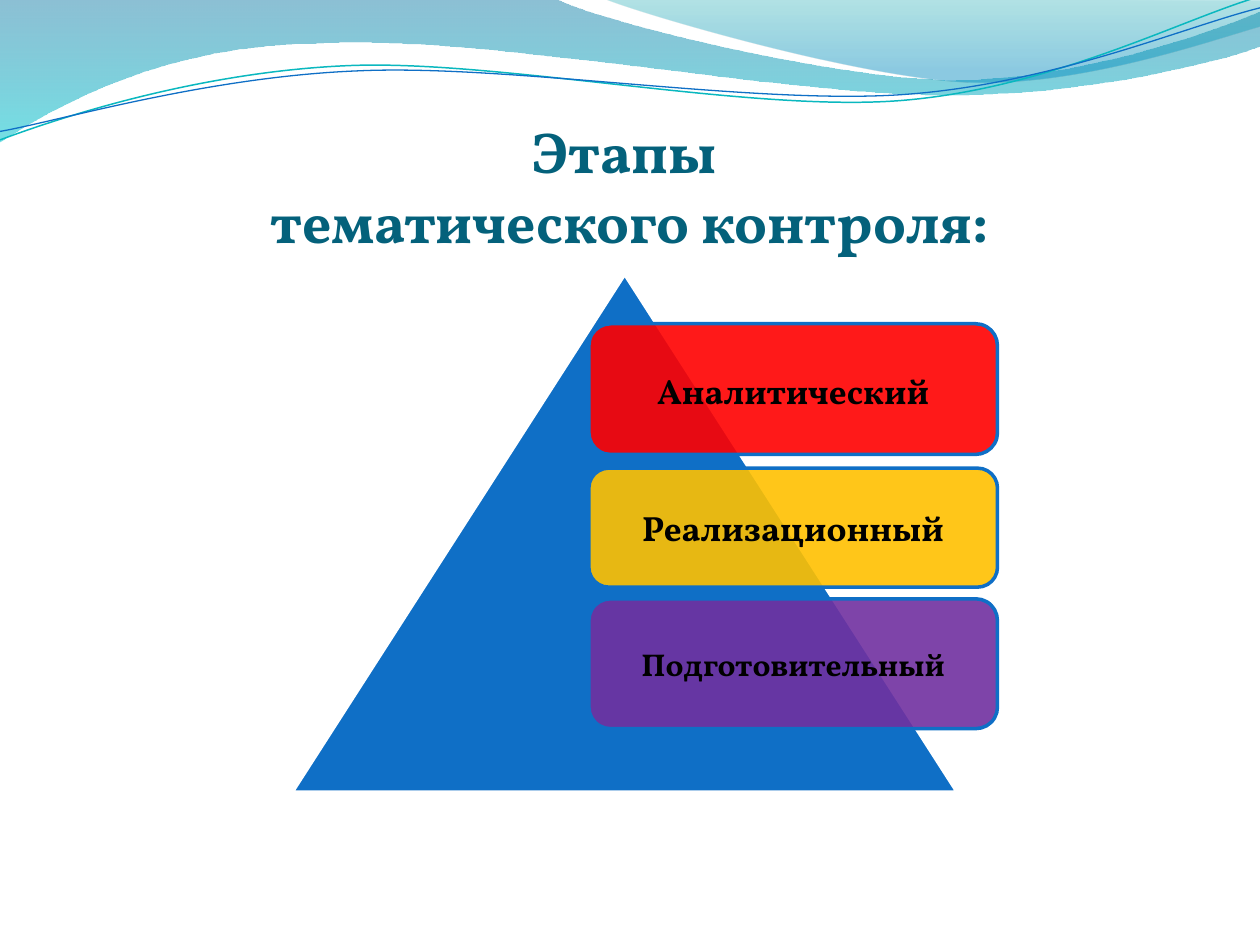
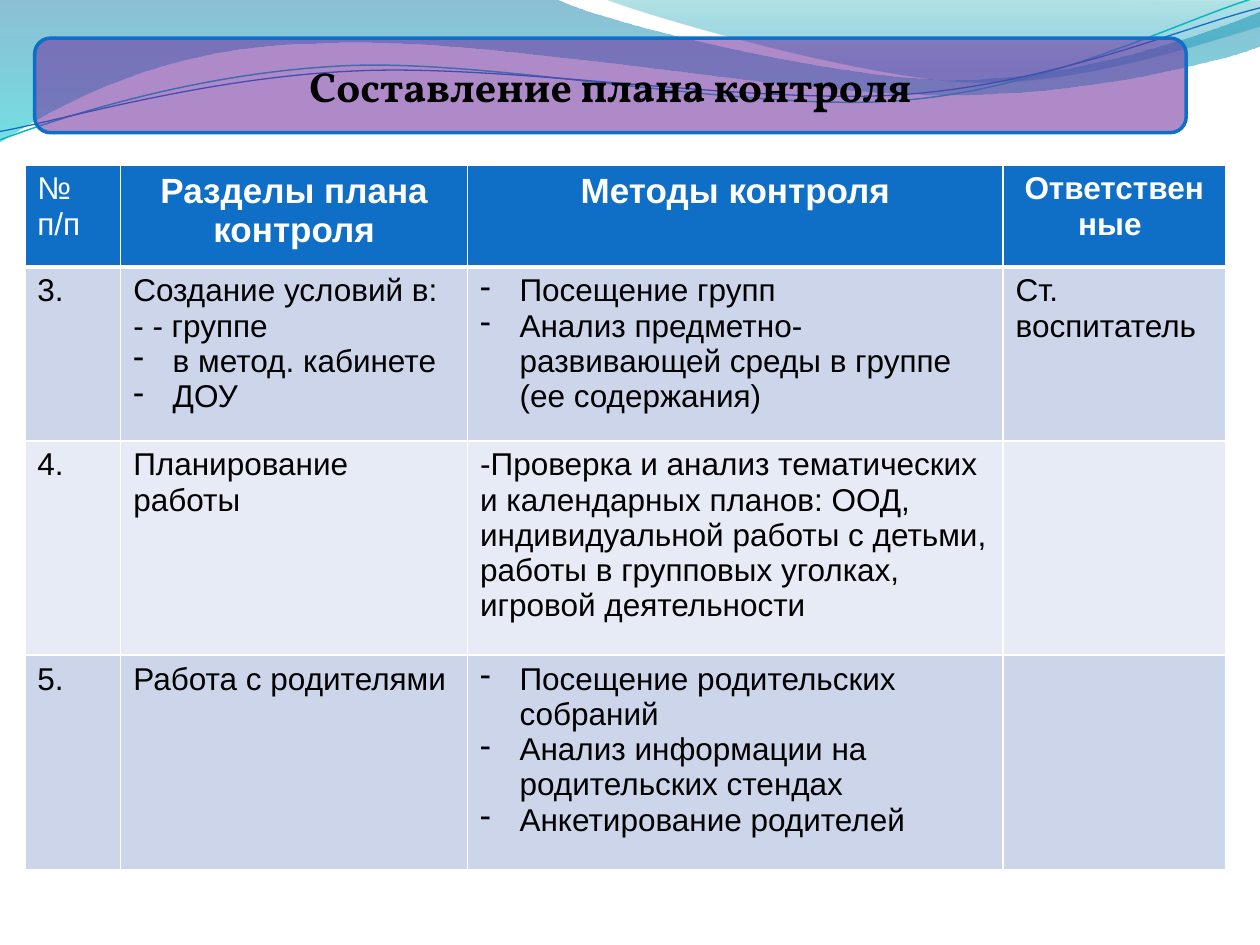
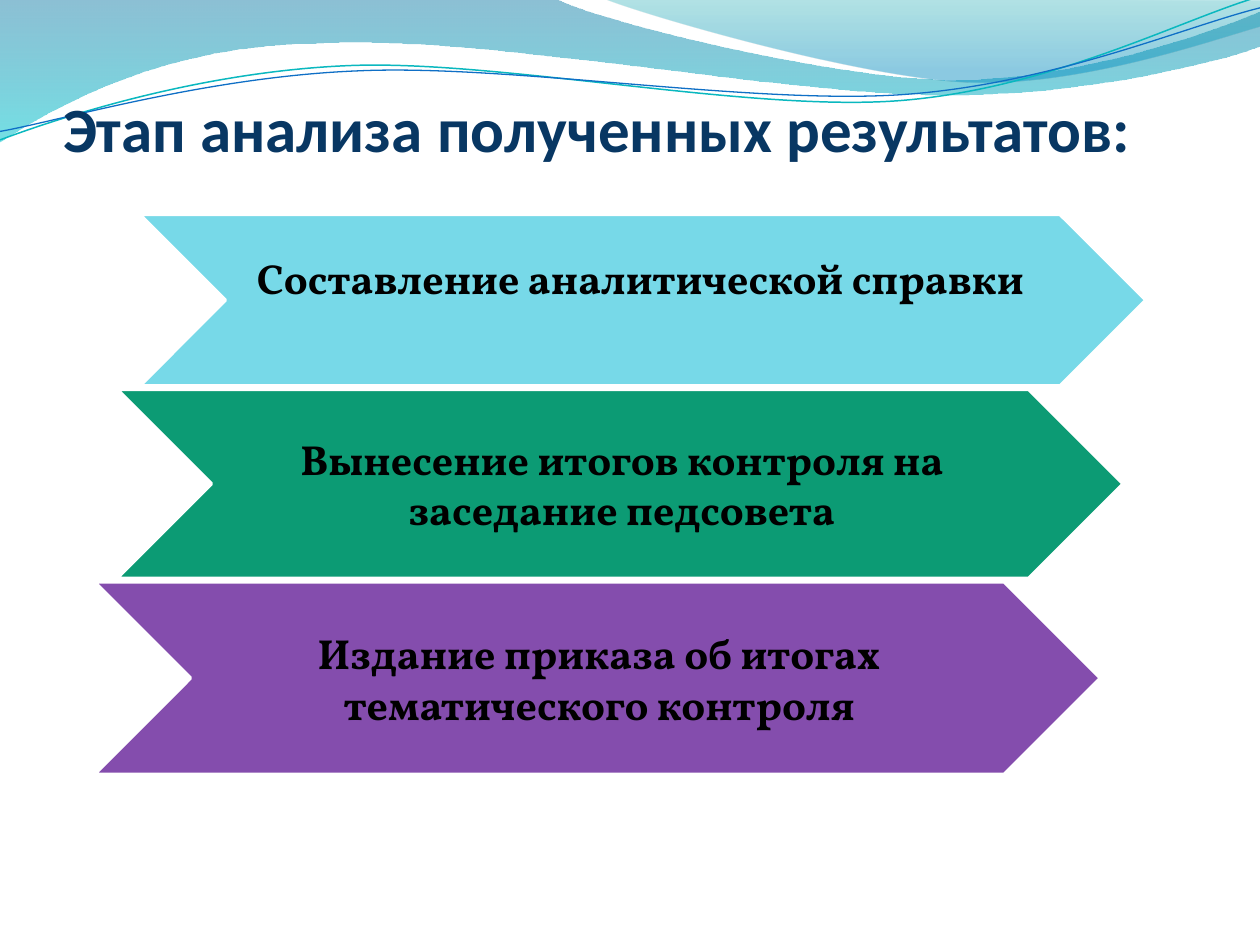
import dataclasses
import pptx
import pptx.dml.color
import pptx.enum.shapes
import pptx.enum.text
import pptx.oxml.ns
import pptx.util

Pt = pptx.util.Pt
qn = pptx.oxml.ns.qn
SHAPE = pptx.enum.shapes.MSO_SHAPE
ALIGN = pptx.enum.text.PP_ALIGN
ANCHOR = pptx.enum.text.MSO_ANCHOR


@dataclasses.dataclass(frozen=True)
class Theme:
    serif: str = "Vollkorn"
    sans: str = "Arial"
    plain: str = "Calibri"
    white: str = "FFFFFF"
    black: str = "000000"
    blue: str = "0F6FC6"
    teal: str = "04617B"
    navy: str = "083763"
    aqua: str = "0AB8BF"
    red: str = "FF0000"
    gold: str = "FFC000"
    purple: str = "7030A0"
    sky: str = "77D9E8"
    green: str = "0C9B74"
    bands: tuple = ("CCD5EA", "E7EBF5")
    title: int = 33
    large: int = 36
    head: int = 24
    mid: int = 20
    body: int = 18


T = Theme()

# Wave outlines: a start, then segments of one point (line) or three (curve)
WAVES = [
    ([(0, -1), [(317, -1)],
      [(343, 12), (478, 45.5), (546, 45.5)],
      [(614, 45.5), (690, 19), (720, 6.5)], [(721, 26)],
      [(708, 31.5), (626, 55), (537, 54)],
      [(447, 54), (275, 20), (185, 24.5)],
      [(93, 25), (33, 60), (-1, 81.5)], [(0, -1)]],
     [(0, "0074A1", 45), (1, "00C6CF", 55)]),
    ([(345, -1), [(366.5, 8), (491, 44.5), (553.5, 47)],
      [(616.5, 49.5), (692, 23), (720, 15)], [(720, 0)], [(345, -1)]],
     [(0, "00A1A9", 30), (0.8, "008BBF", 45)]),
]
CURVES = [
    ([(-1.4, 63), [(33.7, 51.7), (114.3, 29.4), (199.9, 30)],
      [(284.9, 30.5), (425.8, 67.2), (512.5, 64.8)],
      [(599.2, 62.3), (676.6, 25.9), (720.1, 15.4)]], T.aqua, 0.85),
    ([(-1.1, 58.1), [(33.2, 53.7), (118.2, 32.6), (204.3, 33.2)],
      [(290.4, 33.2), (429.1, 63.3), (515.3, 61.4)],
      [(601.4, 59.4), (678.5, 30), (721.4, 21.5)]], T.blue, 0.75),
]
TURN = 357.3

# Table text: a leading "* " marks a dash bullet
HEADS = [("№\nп/п", T.body), ("Разделы плана контроля", T.mid),
         ("Методы контроля", T.mid), ("Ответственные ", T.body)]
ROWS = [
    ["3.",
     "Создание условий в: - - группе\n* в метод. кабинете\n* ДОУ",
     "* Посещение групп\n* Анализ предметно-развивающей среды в группе (ее содержания)",
     "Ст. воспитатель"],
    ["4.", "Планирование работы",
     "-Проверка и анализ тематических и календарных планов: ООД, "
     "индивидуальной работы с детьми, работы в групповых уголках, "
     "игровой деятельности", ""],
    ["5.", "Работа с родителями",
     "* Посещение родительских собраний\n* Анализ информации на "
     "родительских стендах\n* Анкетирование родителей", ""],
]


def tint(code):
    return pptx.dml.color.RGBColor.from_string(code)


def add_tag(parent, name, **attrs):
    tag = parent.makeelement(qn(name), attrs)
    parent.append(tag)
    return tag


def fade(shape, *rates):
    """Set the opacity, in percent, of the fill colours in turn."""
    tags = list(shape._element.spPr.iter(qn("a:srgbClr")))
    for tag, rate in zip(tags, rates):
        add_tag(tag, "a:alpha", val=str(rate * 1000))


def style(para, font, size, color, bold=True, align=ALIGN.CENTER):
    para.alignment = align
    para.font.name = font
    para.font.size = Pt(size)
    para.font.bold = bold
    para.font.color.rgb = tint(color)


def inset(frame, left, top, right, bottom):
    frame.margin_left, frame.margin_top = Pt(left), Pt(top)
    frame.margin_right, frame.margin_bottom = Pt(right), Pt(bottom)


def draw(slide, outline, close):
    """Build a freeform, then bend each three-point segment into a curve."""
    start, *segs = outline
    pen = slide.shapes.build_freeform(*map(Pt, start))
    pen.add_line_segments([(Pt(x), Pt(y)) for seg in segs for x, y in seg], close=close)
    shape = pen.convert_to_shape()
    shape.shadow.inherit = False
    lines = iter(list(shape._element.spPr.iter(qn("a:lnTo"))))
    for seg in segs:
        first, *rest = [next(lines) for _ in seg]
        if rest:
            first.tag = qn("a:cubicBezTo")
            for line in rest:
                first.append(line[0])
                line.getparent().remove(line)
    return shape


def add_waves(deck, slide):
    """Draw the waves, then move them to the master behind its text."""
    parts = []
    for outline, stops in WAVES:
        wave = draw(slide, outline, True)
        wave.line.fill.background()
        wave.fill.gradient()
        wave.fill.gradient_angle = 270
        for stop, (place, color, _) in zip(wave.fill.gradient_stops, stops):
            stop.position = place
            stop.color.rgb = tint(color)
        fade(wave, *[rate for _, _, rate in stops])
        parts.append(wave)
    for outline, color, width in CURVES:
        curve = draw(slide, outline, False)
        curve.rotation = TURN
        curve.fill.background()
        curve.line.color.rgb = tint(color)
        curve.line.width = Pt(width)
        parts.append(curve)
    tree = deck.slide_master.shapes._spTree
    for n, part in enumerate(parts):
        part._element.nvSpPr.cNvPr.set("id", str(100 + n))
        tree.insert(2 + n, part._element)


def add_title(slide, text, height, font, size, color, align):
    title = slide.shapes.title
    title.left, title.top, title.width, title.height = Pt(36), Pt(55.5), Pt(648), Pt(height)
    frame = title.text_frame
    frame.text = text
    frame.auto_size = pptx.enum.text.MSO_AUTO_SIZE.NONE
    frame.vertical_anchor = ANCHOR.BOTTOM
    inset(frame, 0, 3.6, 0, 0)
    style(frame.paragraphs[0], font, size, color, align=align)


def add_block(slide, kind, box, fill, line, rate=100, text="", size=T.head,
              pad=(7, 4, 7, 4)):
    shape = slide.shapes.add_shape(kind, *map(Pt, box))
    shape.shadow.inherit = False
    shape.fill.solid()
    shape.fill.fore_color.rgb = tint(fill)
    if rate < 100:
        fade(shape, rate)
    shape.line.color.rgb = tint(line)
    shape.line.width = Pt(2)
    if text:
        frame = shape.text_frame
        frame.text = text
        frame.word_wrap = True
        frame.vertical_anchor = ANCHOR.MIDDLE
        inset(frame, *pad)
        style(frame.paragraphs[0], T.serif, size, T.black)


def add_edges(cell, color, **widths):
    """Draw cell borders; they come before the fill."""
    props = cell._tc.get_or_add_tcPr()
    for n, (side, width) in enumerate(widths.items()):
        edge = props.makeelement(qn("a:ln" + side), {"w": str(Pt(width))})
        add_tag(add_tag(edge, "a:solidFill"), "a:srgbClr", val=color)
        props.insert(n, edge)


def fill_cell(cell, text, fill, **look):
    cell.fill.solid()
    cell.fill.fore_color.rgb = tint(fill)
    lines = text.split("\n")
    cell.text = "\n".join(line.removeprefix("* ") for line in lines)
    for para, line in zip(cell.text_frame.paragraphs, lines):
        style(para, T.sans, **look)
        if line.startswith("* "):
            props = para._p.get_or_add_pPr()
            props.set("marL", str(Pt(22.5)))
            props.set("indent", str(-Pt(22.5)))
            for name, attrs in (("a:buFontTx", {}), ("a:buChar", {"char": "-"})):
                mark = props.makeelement(qn(name), attrs)
                props.insert_element_before(mark, "a:tabLst", "a:defRPr", "a:extLst")


def add_plan(slide):
    wide, high = [54.8, 198.2, 306, 127], [58.3, 99.4, 122.4, 122.4]
    table = slide.shapes.add_table(len(high), len(wide), Pt(14.2), Pt(94.3),
                                   Pt(sum(wide)), Pt(sum(high))).table
    for col, width in zip(table.columns, wide):
        col.width = Pt(width)
    for row, height in zip(table.rows, high):
        row.height = Pt(height)
    for n, (text, size) in enumerate(HEADS):
        cell = table.cell(0, n)
        fill_cell(cell, text, T.blue, size=size, color=T.white,
                  bold=n > 0, align=ALIGN.CENTER if n else ALIGN.LEFT)
        add_edges(cell, T.white, L=1, R=1, T=1, B=3)
    for r, texts in enumerate(ROWS):
        for c, text in enumerate(texts):
            fill_cell(table.cell(r + 1, c), text, T.bands[r % 2], size=T.body,
                      color=T.black, bold=False, align=ALIGN.LEFT)


def make_stages(slide):
    add_title(slide, "Этапы \vтематического контроля:", 90, T.serif, T.title,
              T.teal, ALIGN.CENTER)
    add_block(slide, SHAPE.ISOSCELES_TRIANGLE, (167, 156.7, 380, 296), T.blue, T.white)
    stages = [("Аналитический", T.red, 185, 74.7, T.mid, 6),
              ("Реализационный", T.gold, 267.5, 68, T.mid, 4),
              ("Подготовительный", T.purple, 342.2, 74.2, T.body, 4)]
    for text, fill, top, height, size, drop in stages:
        add_block(slide, SHAPE.ROUNDED_RECTANGLE, (336.5, top, 233.5, height), fill,
                  T.blue, 90, text, size, (7, drop, 7, 4))


def make_plan(slide):
    add_plan(slide)
    add_block(slide, SHAPE.ROUNDED_RECTANGLE, (19.8, 21.8, 658, 54), T.purple, T.blue,
              56, "Составление плана контроля")


def make_results(slide):
    add_title(slide, "Этап анализа полученных результатов:", 39, T.plain, T.large,
              T.navy, ALIGN.LEFT)
    steps = [("Составление аналитической справки ", T.sky, 100, 98, 27.5),
             ("Вынесение итогов контроля на заседание педсовета", T.green, 100, 108, 1.5),
             ("Издание приказа об итогах тематического контроля", T.purple, 86, 110, 1.5)]
    left, top = 79.8, 122.5
    for text, fill, rate, height, lift in steps:
        add_block(slide, SHAPE.CHEVRON, (left, top, 575, height), fill, T.white, rate,
                  text, T.head, (2, 1.5, 0, lift))
        left -= 13
        top += height + 2


def main():
    deck = pptx.Presentation()
    deck.slide_width, deck.slide_height = Pt(720), Pt(540)
    titled, blank = deck.slide_layouts[5], deck.slide_layouts[6]
    first = deck.slides.add_slide(titled)
    add_waves(deck, first)
    make_stages(first)
    make_plan(deck.slides.add_slide(blank))
    make_results(deck.slides.add_slide(titled))
    deck.save("out.pptx")


if __name__ == "__main__":
    main()
